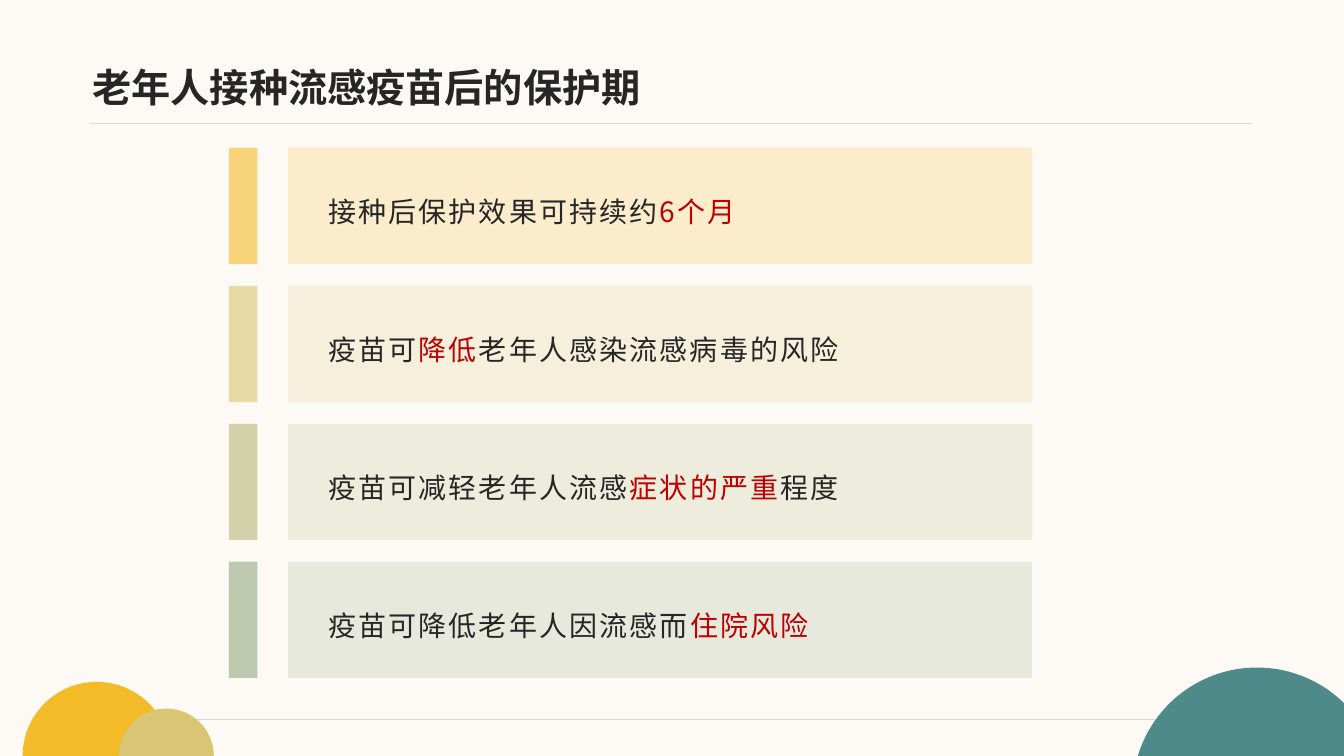
"""Builds a slide on how long flu vaccination protects older people."""
import math
from dataclasses import dataclass

from lxml import etree
from pptx import Presentation
from pptx import util as u
from pptx.dml.color import RGBColor
from pptx.enum import shapes, text
from pptx.oxml import ns


@dataclass(frozen=True)
class Theme:
    """Colours, fonts and type sizes of the slide."""
    paper: str = "FDFAF5"
    ink: str = "262626"
    accent: str = "C00000"
    rule: str = "D9D9D9"
    yellow: str = "F3BB28"
    sand: str = "D9C573"
    olive: str = "B6B679"
    sage: str = "94A87F"
    teal: str = "4F8A8B"
    title_font: str = "Arial"
    body_font: str = "Noto Sans CJK SC"
    title_size: int = 28
    body_size: int = 20


def add_span(para, wording, *, size, color, font, bold=False, spacing=0):
    """Append one formatted run to a paragraph."""
    span = para.add_run()
    span.text = wording
    span.font.size = u.Pt(size)
    span.font.bold = bold
    span.font.name = font
    span.font.color.rgb = RGBColor.from_string(color)
    properties = span.font._element
    if spacing:
        properties.set("spc", str(round(spacing * 100)))
    east_asian = etree.SubElement(properties, ns.qn("a:ea"))
    east_asian.set("typeface", Theme.body_font)


def arc_points(start, end):
    """Return the three Bezier points that carry a unit arc on to its end."""
    pull = 4 / 3 * math.tan((end - start) / 4)
    return [
        (math.cos(start) - pull * math.sin(start), math.sin(start) + pull * math.cos(start)),
        (math.cos(end) + pull * math.sin(end), math.sin(end) - pull * math.cos(end)),
        (math.cos(end), math.sin(end)),
    ]


def bend(shape, curves):
    """Turn the first line segments of a freeform, three by three, into curves."""
    lines = list(shape._element.iter(ns.qn("a:lnTo")))[:3 * curves]
    for first in range(0, len(lines), 3):
        curve = lines[first]
        for line in lines[first + 1:first + 3]:
            curve.append(line[0])
            line.getparent().remove(line)
        curve.tag = ns.qn("a:cubicBezTo")


class SlideBuilder:
    """Draws on one slide, with lengths in percent of its width and height."""

    def __init__(self, deck, theme):
        """Add a title-only slide with the theme's background."""
        self.theme = theme
        self.width, self.height = deck.slide_width, deck.slide_height
        self.slide = deck.slides.add_slide(deck.slide_layouts[5])
        self.paint(self.slide.background.fill, theme.paper)

    def x(self, share):
        """Convert a share of the width to a length."""
        return u.Emu(round(self.width * share / 100))

    def y(self, share):
        """Convert a share of the height to a length."""
        return u.Emu(round(self.height * share / 100))

    def area(self, left, top, width, height):
        """Convert four shares to a position and size."""
        return self.x(left), self.y(top), self.x(width), self.y(height)

    def paint(self, fill, color, opacity=100):
        """Apply a solid fill, see-through if opacity is below 100."""
        fill.solid()
        fill.fore_color.rgb = RGBColor.from_string(color)
        if opacity < 100:
            for tint in fill._xPr.iter(ns.qn("a:srgbClr")):
                alpha = etree.SubElement(tint, ns.qn("a:alpha"))
                alpha.set("val", str(opacity * 1000))

    def finish(self, shape, color, opacity=100):
        """Give a shape a flat fill without outline or shadow."""
        self.paint(shape.fill, color, opacity)
        shape.line.fill.background()
        shape.shadow.inherit = False

    def title(self, wording, *place):
        """Place and format the title."""
        box = self.slide.shapes.title
        box.left, box.top, box.width, box.height = self.area(*place)
        frame = box.text_frame
        frame.margin_left = frame.margin_right = 0
        frame.margin_top = frame.margin_bottom = 0
        frame.vertical_anchor = text.MSO_ANCHOR.MIDDLE
        para = frame.paragraphs[0]
        para.alignment = text.PP_ALIGN.LEFT
        add_span(para, wording, size=self.theme.title_size, color=self.theme.ink,
                 font=self.theme.title_font, bold=True)

    def rule(self, left, right, top):
        """Draw a thin horizontal line."""
        line = self.slide.shapes.add_connector(
            shapes.MSO_CONNECTOR.STRAIGHT,
            self.x(left), self.y(top), self.x(right), self.y(top))
        line.line.color.rgb = RGBColor.from_string(self.theme.rule)
        line.line.width = u.Pt(0.5)
        etree.SubElement(line._element.spPr, ns.qn("a:effectLst"))

    def dome(self, center_x, center_y, radius, color):
        """Draw the part of a circle that lies within the slide."""
        middle, base, reach = self.x(center_x), self.y(center_y), self.y(radius)
        low = math.asin((base - self.height) / reach)
        end = max(low, math.acos(min(1, (self.width - middle) / reach)))
        start, crown = math.pi - low, math.pi / 2
        units = [(math.cos(start), math.sin(start)),
                 *arc_points(start, crown), *arc_points(crown, end)]
        points = [(round(middle + reach * across), round(base - reach * up))
                  for across, up in units]
        if end > low:
            points.append((points[-1][0], self.height))
        outline = self.slide.shapes.build_freeform(*points[0], scale=1.0)
        outline.add_line_segments(points[1:], close=True)
        shape = outline.convert_to_shape()
        bend(shape, 2)
        self.finish(shape, color)

    def block(self, color, opacity, *place):
        """Draw a tinted rectangle."""
        shape = self.slide.shapes.add_shape(
            shapes.MSO_SHAPE.RECTANGLE, *self.area(*place))
        self.finish(shape, color, opacity)

    def statement(self, parts, *place):
        """Write a line whose every second part is highlighted."""
        frame = self.slide.shapes.add_textbox(*self.area(*place)).text_frame
        frame.word_wrap = True
        frame.vertical_anchor = text.MSO_ANCHOR.MIDDLE
        para = frame.paragraphs[0]
        para.line_spacing = 1.3
        for index, part in enumerate(parts):
            add_span(para, part, size=self.theme.body_size, spacing=1.5,
                     color=self.theme.accent if index % 2 else self.theme.ink,
                     font=self.theme.body_font)


def main():
    """Build and save the deck."""
    deck = Presentation()
    deck.slide_width, deck.slide_height = u.Inches(40 / 3), u.Inches(7.5)
    theme = Theme()
    page = SlideBuilder(deck, theme)

    page.rule(6.7, 93.15, 16.35)
    page.dome(7.2, 100, 9.8, theme.yellow)
    page.rule(12.68, 86.63, 95.2)
    page.dome(12.38, 100, 6.27, theme.sand)
    page.dome(93.52, 104.75, 16.45, theme.teal)
    page.title("老年人接种流感疫苗后的保护期", 6.88, 5.2, 86.25, 12.53)

    findings = [
        (theme.yellow, 44.78, ["接种后保护效果可持续约", "6个月"]),
        (theme.sand, 51.68, ["疫苗可", "降低", "老年人感染流感病毒的风险"]),
        (theme.olive, 53.18, ["疫苗可减轻老年人流感", "症状的严重", "程度"]),
        (theme.sage, 46.28, ["疫苗可降低老年人因流感而", "住院风险"]),
    ]
    first_row, row_pitch, row_height, inset = 19.56, 18.25, 15.38, 1.33
    for index, (color, width, parts) in enumerate(findings):
        top = first_row + index * row_pitch
        page.block(color, 20, 21.43, top, 55.36, row_height)
        page.block(color, 60, 17.03, top, 2.13, row_height)
        page.statement(parts, 23.68, top + inset, width, row_height - 2 * inset)

    deck.save("out.pptx")


if __name__ == "__main__":
    main()
